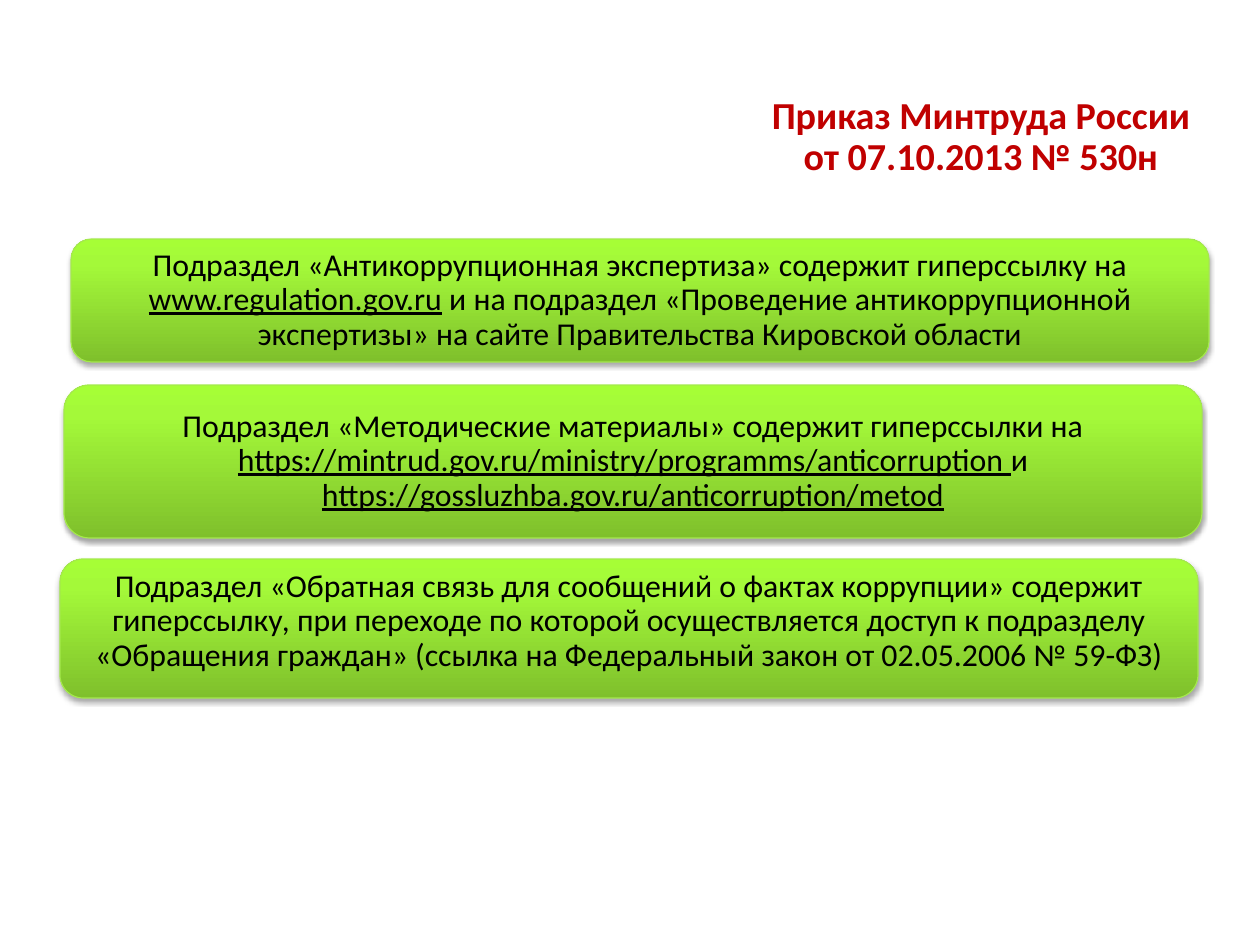
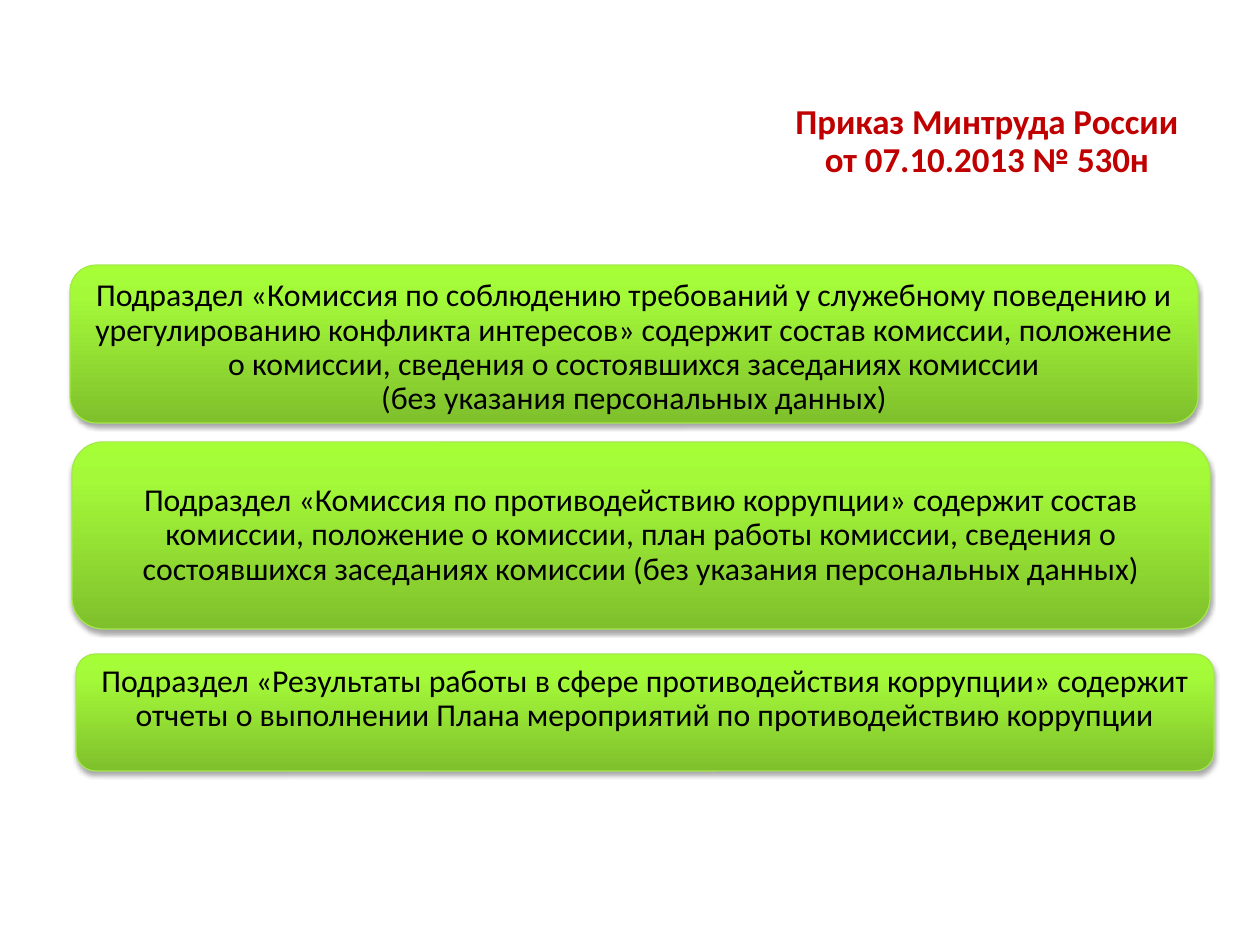
import pptx
import pptx.util
import pptx.dml.color
import pptx.enum.shapes
import pptx.enum.text
import pptx.oxml.ns
from lxml import etree

PX = 8000
FONT = "Calibri"
HUES = {
    "title": "C00000",
    "text": "000000",
    "line": "A4E94C",
    "shade": "000000",
    "low": "7FC02C",
    "mid": "A4F939",
    "high": "A6FE36",
}
STOPS = ((0, "low"), (80, "mid"), (100, "high"))
TITLE = "Приказ Минтруда России\vот 07.10.2013 № 530н"

PAGES = [
    {
        "title": ((754, 93, 454, 90), 24),
        "cards": [
            ((71, 239, 1138, 123), 0, [
                "Подраздел «Антикоррупционная экспертиза» содержит гиперссылку на ",
                "www.regulation.gov.ru",
                " и на подраздел «Проведение антикоррупционной экспертизы» "
                "на сайте Правительства Кировской области"]),
            ((64, 385, 1138, 153), 0, [
                "Подраздел «Методические материалы» содержит гиперссылки на ",
                "https://mintrud.gov.ru/ministry/programms/anticorruption ",
                "и ",
                "https://gossluzhba.gov.ru/anticorruption/metod"]),
            ((60, 559, 1138, 139), -7, [
                "Подраздел «Обратная связь для сообщений о фактах коррупции» "
                "содержит гиперссылку, при переходе по которой осуществляется "
                "доступ к подразделу «Обращения граждан» (ссылка на "
                "Федеральный закон от 02.05.2006 № 59-ФЗ)"]),
        ],
    },
    {
        "title": ((762, 105, 450, 74), 22),
        "cards": [
            ((70, 265, 1128, 158), 4, [
                "Подраздел «Комиссия по соблюдению требований у служебному "
                "поведению и урегулированию конфликта интересов» содержит "
                "состав комиссии, положение о комиссии, сведения о "
                "состоявшихся заседаниях комиссии\v"
                "(без указания персональных данных)"]),
            ((72, 442, 1138, 187), 0, [
                "Подраздел «Комиссия по противодействию коррупции» содержит "
                "состав комиссии, положение о комиссии, план работы комиссии, "
                "сведения о состоявшихся заседаниях комиссии "
                "(без указания персональных данных)"]),
            ((76, 654, 1138, 117), -13, [
                "Подраздел «Результаты работы в сфере противодействия "
                "коррупции» содержит отчеты о выполнении Плана мероприятий "
                "по противодействию коррупции"]),
        ],
    },
]


def rgb(name):
    return pptx.dml.color.RGBColor.from_string(HUES[name])


def place(box):
    return [pptx.util.Emu(n * PX) for n in box]


def node(root, tag, **attrs):
    return etree.SubElement(root, pptx.oxml.ns.qn(tag), attrs)


def tint(root, name):
    return node(root, "a:srgbClr", val=HUES[name])


def setup(frame, side, top, base):
    frame.word_wrap = True
    frame.vertical_anchor = pptx.enum.text.MSO_ANCHOR.MIDDLE
    frame.margin_left = frame.margin_right = side * PX
    frame.margin_top = top * PX
    frame.margin_bottom = base * PX


def style(para, size, hue, bold=False):
    para.alignment = pptx.enum.text.PP_ALIGN.CENTER
    para.line_spacing = 0.9
    for run in para.runs:
        run.font.name = FONT
        run.font.size = pptx.util.Pt(size)
        run.font.bold = bold
        run.font.color.rgb = rgb(hue)


def add_title(slide, box, size):
    frame = slide.shapes.add_textbox(*place(box)).text_frame
    setup(frame, 0, 0, 0)
    frame.text = TITLE
    style(frame.paragraphs[0], size, "title", True)


def glow(shape):
    shape.fill.gradient()
    shape.fill.gradient_angle = 90
    props = shape.element.spPr
    stops = props.find(".//" + pptx.oxml.ns.qn("a:gsLst"))
    for stop in list(stops):
        stops.remove(stop)
    for part, name in STOPS:
        tint(node(stops, "a:gs", pos=str(part * 1000)), name)
    shape.line.color.rgb = rgb("line")
    shape.line.width = pptx.util.Pt(0.75)
    shape.shadow.inherit = False
    shade = node(props.find(pptx.oxml.ns.qn("a:effectLst")), "a:outerShdw",
                 blurRad="40000", dist="23000", dir="5400000", rotWithShape="0")
    node(tint(shade, "shade"), "a:alpha", val="35000")


def add_card(slide, box, shift, parts):
    kind = pptx.enum.shapes.MSO_SHAPE.ROUNDED_RECTANGLE
    shape = slide.shapes.add_shape(kind, *place(box))
    glow(shape)
    frame = shape.text_frame
    setup(frame, 11, max(2 * shift, 0), max(-2 * shift, 0))
    para = frame.paragraphs[0]
    if len(parts) == 1:
        para.text = parts[0]
    else:
        for i, part in enumerate(parts):
            run = para.add_run()
            run.text = part
            run.font.underline = i % 2 == 1
    style(para, 20, "text")


def main():
    deck = pptx.Presentation()
    deck.slide_width, deck.slide_height = place((1260, 945))
    for page in PAGES:
        slide = deck.slides.add_slide(deck.slide_layouts[6])
        add_title(slide, *page["title"])
        for card in page["cards"]:
            add_card(slide, *card)
    deck.save("out.pptx")


if __name__ == "__main__":
    main()
